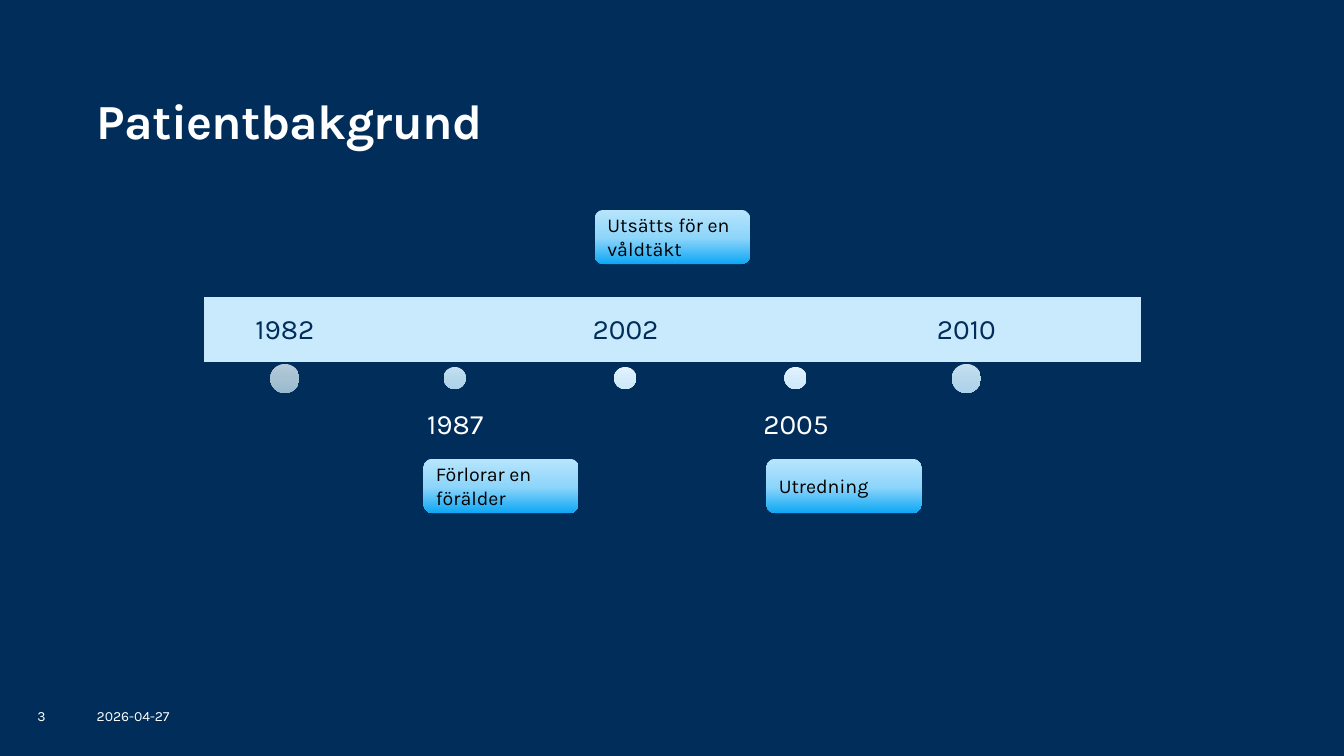
"""Build the patient background slide with its timeline."""
from copy import deepcopy

from pptx import Presentation
from pptx.dml.color import RGBColor
from pptx.enum.shapes import MSO_SHAPE
from pptx.enum.text import MSO_ANCHOR, MSO_AUTO_SIZE, PP_ALIGN
from pptx.oxml.ns import qn
from pptx.util import Pt

PX = 9144
TOP, MIDDLE, BOTTOM = MSO_ANCHOR.TOP, MSO_ANCHOR.MIDDLE, MSO_ANCHOR.BOTTOM
LEFT, CENTER = PP_ALIGN.LEFT, PP_ALIGN.CENTER
BAR, DOT, PILL = (MSO_SHAPE.FLOWCHART_PROCESS, MSO_SHAPE.OVAL,
                  MSO_SHAPE.FLOWCHART_ALTERNATE_PROCESS)
NAVY = RGBColor(0x00, 0x2D, 0x5A)
WHITE = RGBColor(0xFF, 0xFF, 0xFF)
BLACK = RGBColor(0x00, 0x00, 0x00)
PALE = RGBColor(0xC9, 0xE9, 0xFC)
GREY = (RGBColor(0xB4, 0xCB, 0xDA), RGBColor(0xA7, 0xC2, 0xD3),
        RGBColor(0x97, 0xBA, 0xCF))
MIST = (RGBColor(0xC5, 0xE0, 0xF0), RGBColor(0xB7, 0xD7, 0xEB),
        RGBColor(0xAC, 0xD3, 0xEB))
ICE = (RGBColor(0xE5, 0xF3, 0xFD), RGBColor(0xD5, 0xEC, 0xFB),
       RGBColor(0xCF, 0xEA, 0xFC))
SKY = (RGBColor(0xB8, 0xE5, 0xFC), RGBColor(0x8D, 0xD5, 0xFA),
       RGBColor(0x0E, 0xA7, 0xF5))


def write(shape, text, size, color, anchor, align=LEFT, inset=None):
    """Put one formatted paragraph in a shape and return its font."""
    frame = shape.text_frame
    frame.word_wrap = True
    frame.auto_size = MSO_AUTO_SIZE.NONE
    frame.vertical_anchor = anchor
    if inset is not None:
        frame.margin_left = frame.margin_right = inset * PX
        frame.margin_top = frame.margin_bottom = inset * PX
    frame.text = text
    para = frame.paragraphs[0]
    para.alignment = align
    font = para.font
    font.name, font.size, font.color.rgb = "Karla", Pt(size), color
    return font


def draw(kind, box, colors, mid=50):
    """Add a preset shape with a flat fill or a downward gradient."""
    shape = slide.shapes.add_shape(kind, *(n * PX for n in box))
    shape.shadow.inherit = False
    shape.line.fill.background()
    fill = shape.fill
    if len(colors) == 1:
        fill.solid()
        fill.fore_color.rgb = colors[0]
        return shape
    fill.gradient()
    fill.gradient_angle = 270
    stops = shape.element.spPr.find(qn("a:gradFill")).find(qn("a:gsLst"))
    stops.insert(1, deepcopy(stops[0]))
    for stop, color, pos in zip(fill.gradient_stops, colors, (0, mid, 100)):
        stop.color.rgb, stop.position = color, pos / 100
    return shape


deck = Presentation()
deck.slide_width, deck.slide_height = 1333 * PX, 750 * PX
slide = deck.slides.add_slide(deck.slide_layouts[5])
slide.background.fill.solid()
slide.background.fill.fore_color.rgb = NAVY

title = slide.shapes.title
title.left, title.top = 96 * PX, 90 * PX
title.width, title.height = 1143 * PX, 59 * PX
font = write(title, "Patientbakgrund", 35, WHITE, BOTTOM, inset=0)
font.bold = True
font._element.set("spc", "-50")
title.text_frame.paragraphs[0].line_spacing = 0.9

for text, left, width in (("2026-04-27", 96, 84), ("3", 37, 48)):
    foot = slide.shapes.add_textbox(left * PX, 697 * PX, width * PX, 22 * PX)
    write(foot, text, 10, WHITE, BOTTOM, inset=0)

draw(BAR, (202, 295, 930, 64), (PALE,))
years = (("1982", 29, GREY), ("1987", 22, MIST), ("2002", 22, ICE),
         ("2005", 22, ICE), ("2010", 29, MIST))
for i, (year, size, colors) in enumerate(years):
    left = 202 + 169 * i
    top, color, anchor = (391, WHITE, TOP) if i % 2 else (295, NAVY, BOTTOM)
    label = slide.shapes.add_textbox(left * PX, top * PX, 161 * PX, 64 * PX)
    write(label, year, 20, color, anchor, CENTER, 16)
    label.text_frame.paragraphs[0].line_spacing = 0.9
    draw(DOT, (left + 80 - size // 2, 375 - size // 2, size, size), colors)

events = (("Förlorar en förälder", 455), ("Utsätts för en våldtäkt", 208),
          ("Utredning", 455))
for i, (text, top) in enumerate(events):
    pill = draw(PILL, (420 + 170 * i, top, 154, 54), SKY, 52)
    write(pill, text, 14, BLACK, MIDDLE)

deck.save("out.pptx")
